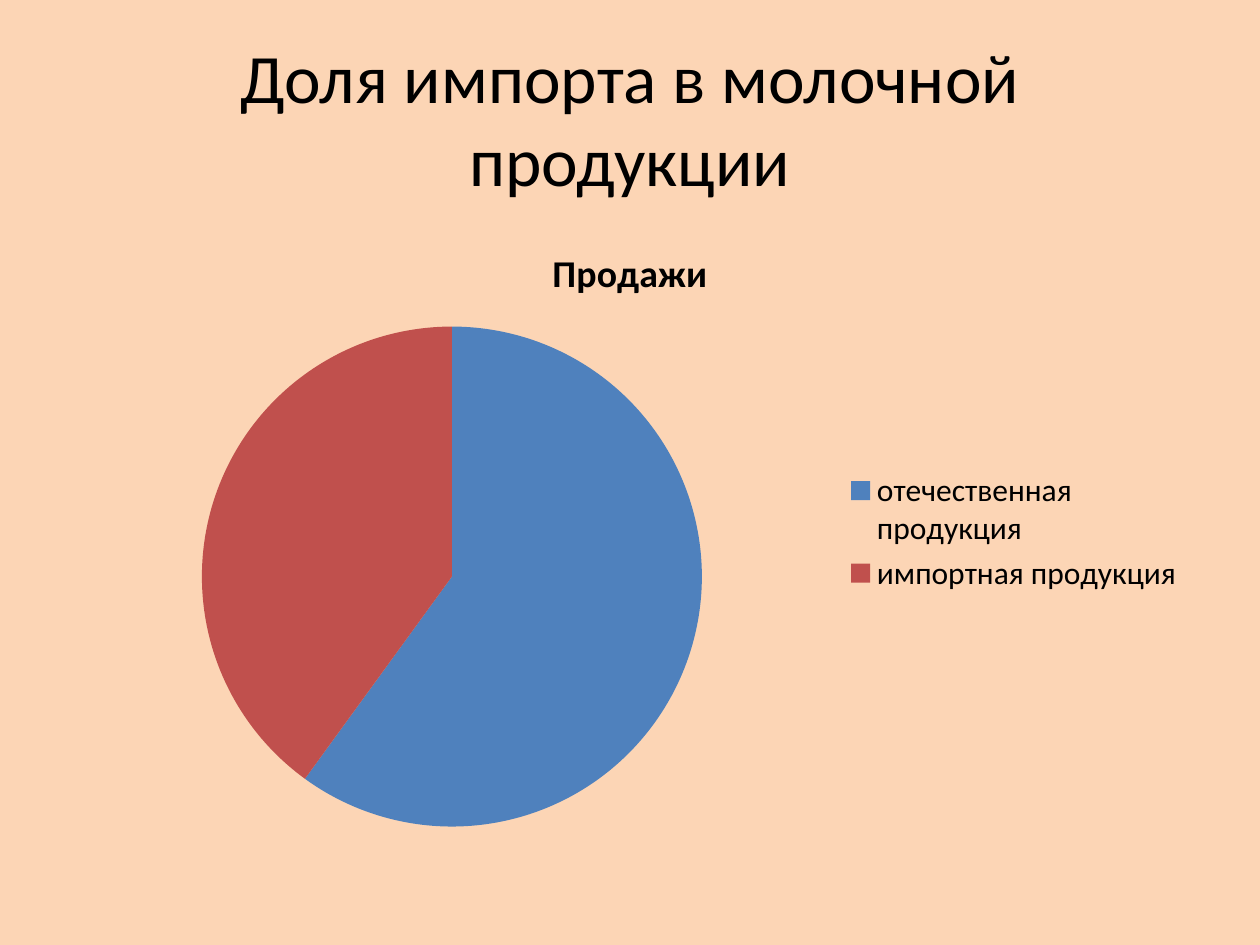
from pptx import Presentation
from pptx.chart.data import CategoryChartData
from pptx.dml.color import RGBColor
from pptx.enum.chart import XL_CHART_TYPE as ChartType, XL_LEGEND_POSITION as LegendPosition
from pptx.enum.text import MSO_ANCHOR as Anchor, PP_ALIGN as Align
from pptx.util import Pt

EMU_PER_PX = 914400 / 126
FONT = "Calibri"
COLORS = {
    "background": "FCD5B5",
    "text": "000000",
    "domestic": "4F81BD",
    "imported": "C0504D",
}
SALES = {"отечественная продукция": 60, "импортная продукция": 40}


def px(*lengths):
    """Turn pixel lengths into EMU."""
    return [round(length * EMU_PER_PX) for length in lengths]


def paint(fill, color):
    """Give a fill one solid colour."""
    fill.solid()
    fill.fore_color.rgb = RGBColor.from_string(COLORS[color])


def style_font(font, size, bold=False, color="text"):
    """Set typeface, size, weight and colour."""
    font.name = FONT
    font.size = Pt(size)
    font.bold = bold
    font.color.rgb = RGBColor.from_string(COLORS[color])


def write(frame, text, align=Align.CENTER, **font_format):
    """Put formatted text into a text frame."""
    paragraph = frame.paragraphs[0]
    paragraph.alignment = align
    run = paragraph.add_run()
    run.text = text
    style_font(run.font, **font_format)


def add_heading(slide, text, box):
    """Add the slide heading."""
    frame = slide.shapes.add_textbox(*px(*box)).text_frame
    frame.word_wrap = True
    frame.vertical_anchor = Anchor.MIDDLE
    write(frame, text, size=39.6)


def add_sales_pie(slide, title, sales, slice_colors, box):
    """Add a pie chart with a title and a legend on the right."""
    sales_data = CategoryChartData()
    sales_data.categories = sales.keys()
    sales_data.add_series(title, sales.values())
    chart = slide.shapes.add_chart(ChartType.PIE, *px(*box), sales_data).chart
    style_font(chart.font, size=18)
    chart.has_title = True
    write(chart.chart_title.text_frame, title, size=21.6, bold=True)
    chart.chart_title.include_in_layout = False
    chart.has_legend = True
    chart.legend.position = LegendPosition.RIGHT
    chart.legend.include_in_layout = False
    pie = chart.plots[0]
    pie.vary_by_categories = True
    for index, color in enumerate(slice_colors):
        paint(pie.series[0].points[index].format.fill, color)


def main():
    """Build and save the slide."""
    deck = Presentation()
    deck.slide_width, deck.slide_height = px(1260, 945)
    slide = deck.slides.add_slide(deck.slide_layouts[6])
    paint(slide.background.fill, "background")
    add_heading(slide, "Доля импорта в молочной продукции", (63, 38, 1134, 158))
    add_sales_pie(slide, "Продажи", SALES, ("domestic", "imported"), (63, 220, 1134, 624))
    deck.save("out.pptx")


if __name__ == "__main__":
    main()
